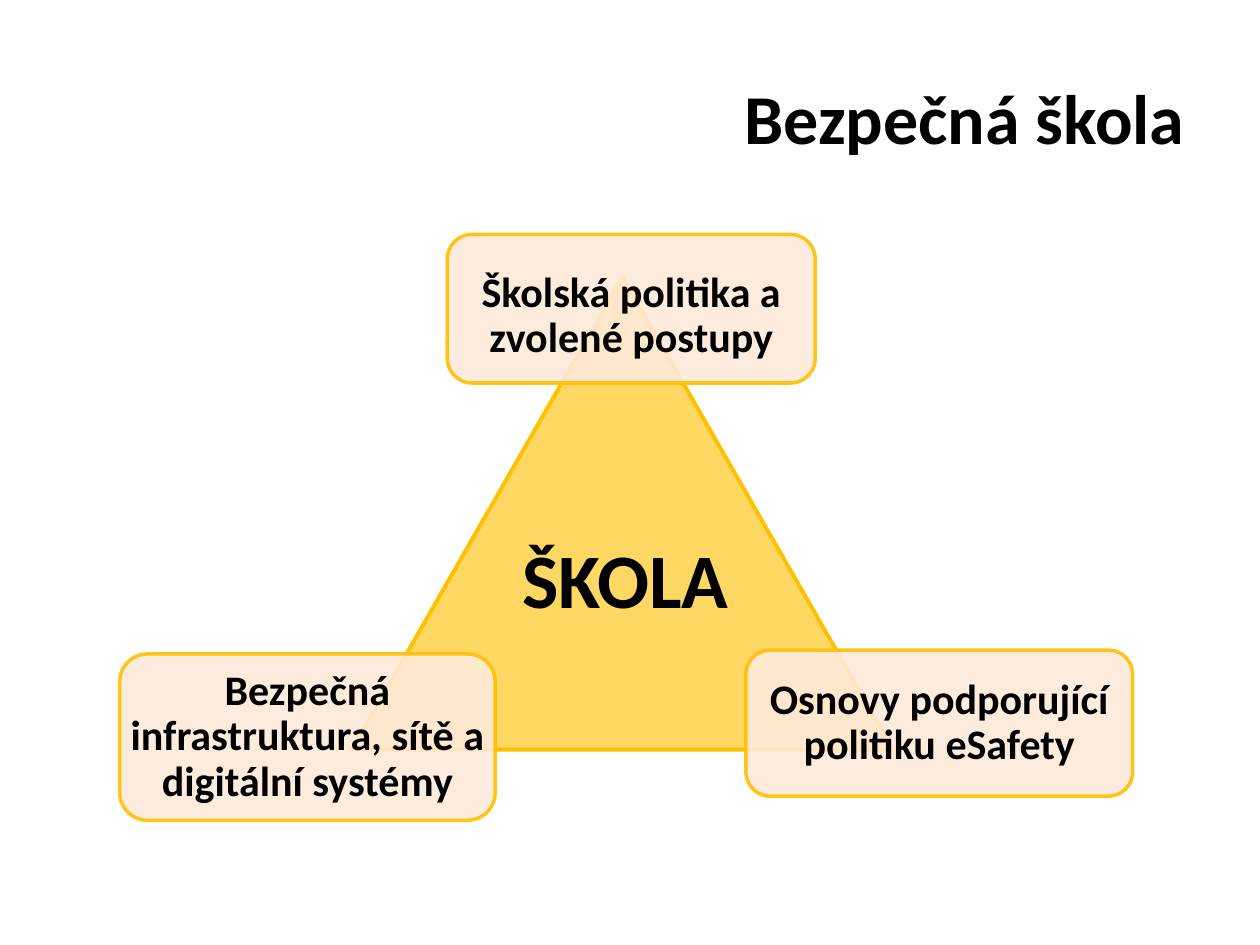
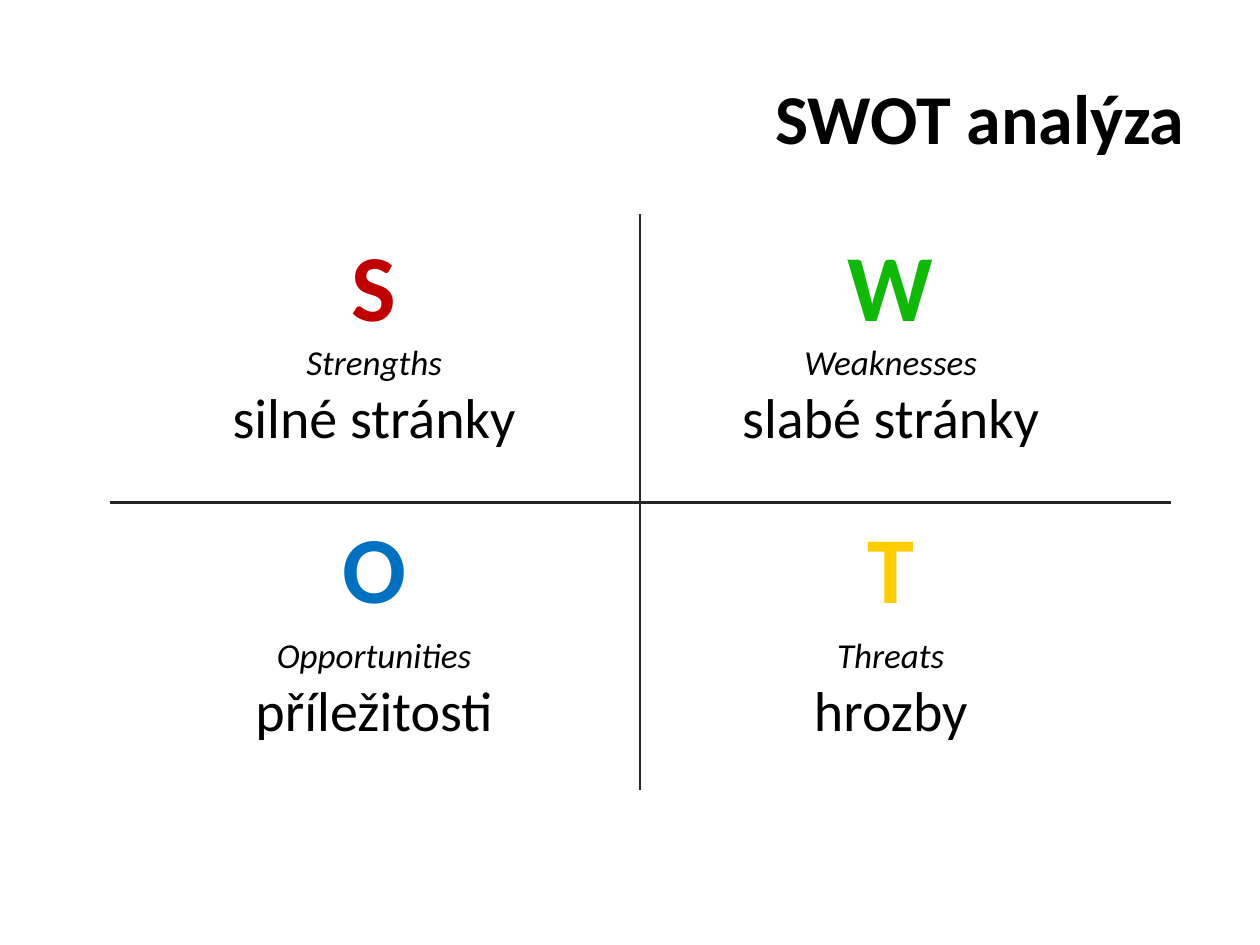
from lxml.etree import SubElement
from pptx import Presentation
from pptx.dml.color import RGBColor
from pptx.enum.shapes import MSO_CONNECTOR, MSO_SHAPE
from pptx.enum.text import MSO_ANCHOR, PP_ALIGN
from pptx.oxml.ns import qn
from pptx.util import Inches, Pt

FONT = "Calibri"
BLACK = RGBColor(0x00, 0x00, 0x00)
AXIS = RGBColor(0x26, 0x26, 0x26)
AMBER = RGBColor(0xFF, 0xC0, 0x00)
CREAM = RGBColor(0xFD, 0xEA, 0xDA)
RED = RGBColor(0xC0, 0x00, 0x00)
GREEN = RGBColor(0x10, 0xB8, 0x08)
BLUE = RGBColor(0x00, 0x70, 0xC0)
YELLOW = RGBColor(0xFF, 0xCC, 0x00)

TITLE = {"size": Pt(40), "bold": True}
CARD = {"size": Pt(24), "bold": True}
CENTER_LABEL = {"size": Pt(44), "bold": True}
LETTER = {"size": Pt(54), "bold": True}
ENGLISH = {"size": Pt(20), "italic": True}
CZECH = {"size": Pt(32)}


def write(tf, lines, align=PP_ALIGN.CENTER, color=BLACK, spacing=None):
    """Fill a text frame with one paragraph per (text, format) pair."""
    tf.word_wrap = True
    for i, (text, style) in enumerate(lines):
        p = tf.paragraphs[0] if i == 0 else tf.add_paragraph()
        p.alignment = align
        p.line_spacing = spacing
        r = p.add_run()
        r.text = text
        r.font.color.rgb = color
        for name, value in {"name": FONT, **style}.items():
            setattr(r.font, name, value)


def add_text(slide, box, lines, **options):
    tf = slide.shapes.add_textbox(*map(Inches, box)).text_frame
    write(tf, lines, **options)
    return tf


def add_title(slide, text):
    tf = add_text(slide, (0.5, 0.3, 9, 1.25), [(text, TITLE)], align=PP_ALIGN.RIGHT)
    tf.vertical_anchor = MSO_ANCHOR.MIDDLE


def set_opacity(fill_format, percent):
    """Make a solid fill, of a shape or a line, partly transparent."""
    color = fill_format._xPr.find(qn("a:solidFill"))[0]
    SubElement(color, qn("a:alpha"), val=str(percent * 1000))


def add_outlined(slide, kind, box, fill, opacity, width):
    sp = slide.shapes.add_shape(kind, *map(Inches, box))
    sp.shadow.inherit = False
    sp.fill.solid()
    sp.fill.fore_color.rgb = fill
    set_opacity(sp.fill, opacity)
    sp.line.color.rgb = AMBER
    sp.line.width = Pt(width)
    return sp


def add_card(slide, box, text, top_inset=0):
    sp = add_outlined(slide, MSO_SHAPE.ROUNDED_RECTANGLE, box, CREAM, 90, 2)
    set_opacity(sp.line.fill, 90)
    tf = sp.text_frame
    for side in ("left", "right", "bottom"):
        setattr(tf, f"margin_{side}", 0)
    tf.margin_top = Inches(top_inset)
    tf.vertical_anchor = MSO_ANCHOR.MIDDLE
    write(tf, [(text, CARD)], spacing=0.9)


def add_line(slide, *ends):
    line = slide.shapes.add_connector(MSO_CONNECTOR.STRAIGHT, *map(Inches, ends))
    line.line.color.rgb = AXIS
    line.line.width = Pt(1.5)
    SubElement(line._element.spPr, qn("a:effectLst"))


def add_quadrant(slide, center, letter_top, caption_top, color, english, czech):
    width = 3
    left = center - width / 2
    add_text(slide, (left, letter_top, width, 1.01), [(english[0], LETTER)], color=color)
    add_text(slide, (left, caption_top, width, 0.98),
             [(english, ENGLISH), (czech, CZECH)])


def build_safe_school(slide):
    add_title(slide, "Bezpečná škola")
    add_outlined(slide, MSO_SHAPE.ISOSCELES_TRIANGLE, (2.79, 2.2, 4.3, 3.75),
                 AMBER, 61, 2.25)
    add_card(slide, (5.92, 5.16, 3.07, 1.16), "Osnovy podporující politiku eSafety")
    add_card(slide, (3.55, 1.86, 2.92, 1.18), "Školská politika a zvolené postupy", 0.12)
    add_card(slide, (0.95, 5.19, 2.98, 1.32),
             "Bezpečná infrastruktura, sítě a digitální systémy")
    add_text(slide, (3.78, 4.17, 2.37, 0.84), [("ŠKOLA", CENTER_LABEL)])


def build_swot(slide):
    add_title(slide, "SWOT analýza")
    add_line(slide, 5.08, 1.7, 5.08, 6.27)
    add_line(slide, 0.87, 3.99, 9.29, 3.99)
    left, right = 2.97, 7.07
    upper, lower = (1.75, 2.65), (3.99, 4.98)
    add_quadrant(slide, left, *upper, RED, "Strengths", "silné stránky")
    add_quadrant(slide, right, *upper, GREEN, "Weaknesses", "slabé stránky")
    add_quadrant(slide, left, *lower, BLUE, "Opportunities", "příležitosti")
    add_quadrant(slide, right, *lower, YELLOW, "Threats", "hrozby")


def main():
    prs = Presentation()
    prs.slide_width, prs.slide_height = Inches(10), Inches(7.5)
    for build in (build_safe_school, build_swot):
        build(prs.slides.add_slide(prs.slide_layouts[6]))
    prs.save("out.pptx")


if __name__ == "__main__":
    main()
